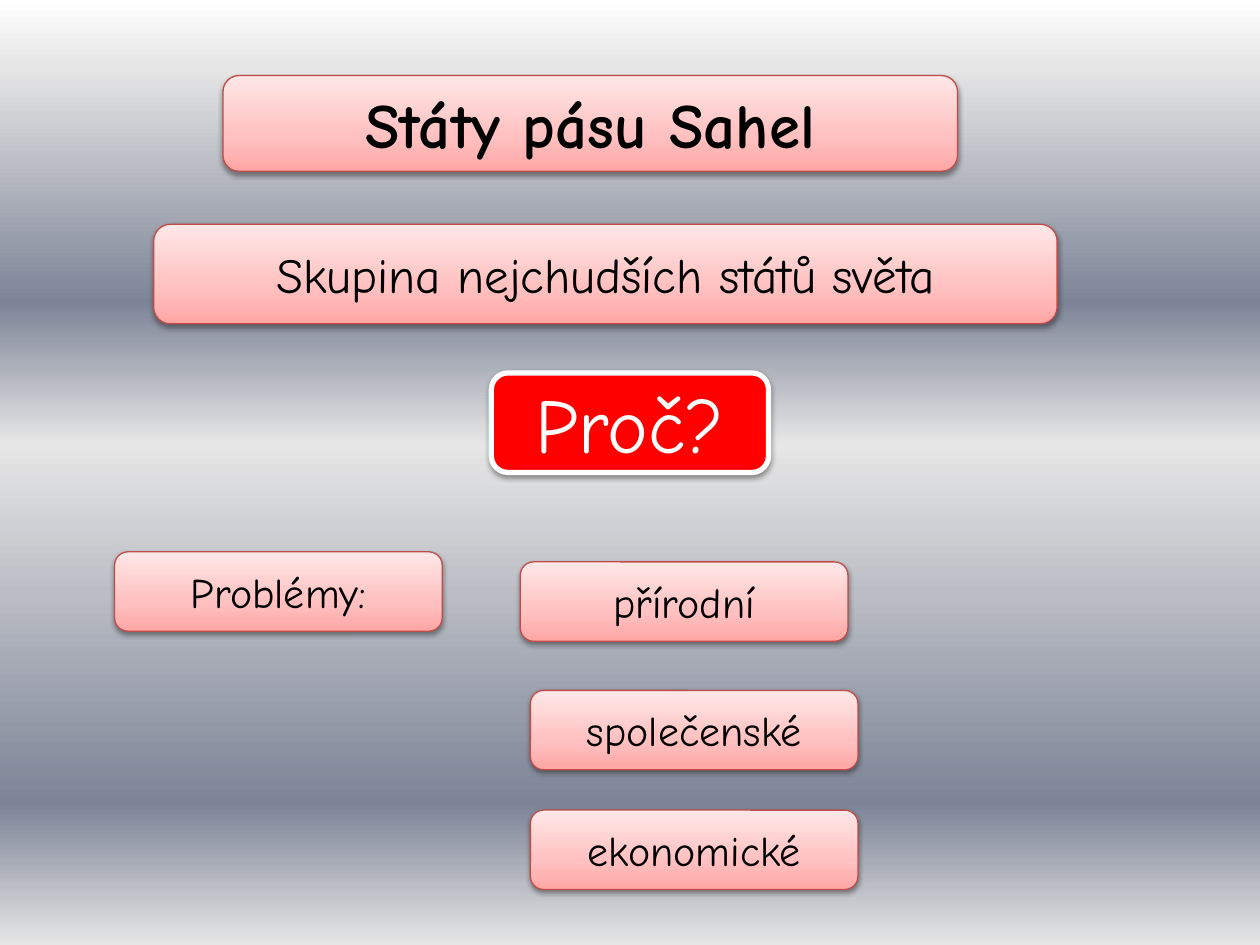
from lxml import etree
from pptx import Presentation
from pptx.dml.color import RGBColor
from pptx.enum.shapes import MSO_SHAPE
from pptx.enum.text import MSO_ANCHOR, PP_ALIGN
from pptx.oxml.ns import qn
from pptx.util import Inches, Pt

ROUND = MSO_SHAPE.ROUNDED_RECTANGLE
MIDDLE = MSO_ANCHOR.MIDDLE
CENTER = PP_ALIGN.CENTER

COLORS = {
    "white": "FFFFFF", "black": "000000", "red": "FF0000", "edge": "BF4C48",
    "rose": "FFA6A5", "pink": "FFC0BF", "blush": "FFE7E7",
    "mist": "E6E6E6", "slate": "7D8496",
}
SKY = [(0, "white"), (7, "mist"), (32, "slate"), (47, "mist"), (85, "slate"), (100, "mist")]
GLOW = [(0, "rose"), (35, "pink"), (100, "blush")]


class Deck:
    """Holds the style and the current slide."""

    font = "Comic Neue"
    shade = {"blurRad": 40000, "dist": 20000, "dir": 5400000, "rotWithShape": 0}

    def __init__(self, width, height):
        self.file = Presentation()
        self.file.slide_width = Inches(width)
        self.file.slide_height = Inches(height)
        self.slide = self.file.slides.add_slide(self.file.slide_layouts[6])

    def color(self, name):
        return RGBColor.from_string(COLORS[name])

    def node(self, parent, tag, **values):
        return etree.SubElement(parent, qn(tag), {k: str(v) for k, v in values.items()})

    def blend(self, fill, root, stops, angle):
        fill.gradient()
        grad = next(root.iter(qn("a:gradFill")))
        for child in list(grad):
            grad.remove(child)
        group = self.node(grad, "a:gsLst")
        for place, name in stops:
            stop = self.node(group, "a:gs", pos=place * 1000)
            self.node(stop, "a:srgbClr", val=COLORS[name])
        self.node(grad, "a:lin", ang=angle * 60000, scaled=0)

    def backdrop(self, stops):
        self.blend(self.slide.background.fill, self.slide.element, stops, 90)

    def shadow(self, shape):
        shape.shadow.inherit = False
        effects = next(shape.element.iter(qn("a:effectLst")))
        outer = self.node(effects, "a:outerShdw", **self.shade)
        tint = self.node(outer, "a:srgbClr", val=COLORS["black"])
        self.node(tint, "a:alpha", val=38000)

    def box(self, text, place, size, fill=None, edge="edge", line=0.75, ink="black", bold=False):
        shape = self.slide.shapes.add_shape(ROUND, *map(Inches, place))
        if fill:
            shape.fill.solid()
            shape.fill.fore_color.rgb = self.color(fill)
        else:
            self.blend(shape.fill, shape.element, GLOW, 270)
        shape.line.color.rgb = self.color(edge)
        shape.line.width = Pt(line)
        self.shadow(shape)
        frame = shape.text_frame
        frame.word_wrap = True
        frame.vertical_anchor = MIDDLE
        par = frame.paragraphs[0]
        par.alignment = CENTER
        run = par.add_run()
        run.text = text
        form = {"name": self.font, "size": Pt(size), "bold": bold}
        for key, value in form.items():
            setattr(run.font, key, value)
        run.font.color.rgb = self.color(ink)


deck = Deck(10, 7.5)
deck.backdrop(SKY)
deck.box("Státy pásu Sahel", (1.77, 0.6, 5.83, 0.76), 36, bold=True)
deck.box("Skupina nejchudších států světa", (1.22, 1.78, 7.17, 0.79), 28)
deck.box("Proč?", (3.9, 2.96, 2.2, 0.79), 44, fill="red", edge="white", line=3, ink="white")

TOPICS = [
    ("Problémy:", 0.91, 4.38),
    ("přírodní", 4.13, 4.46),
    ("společenské", 4.21, 5.48),
    ("ekonomické", 4.21, 6.43),
]
for text, left, top in TOPICS:
    deck.box(text, (left, top, 2.6, 0.63), 24)

deck.file.save("out.pptx")
